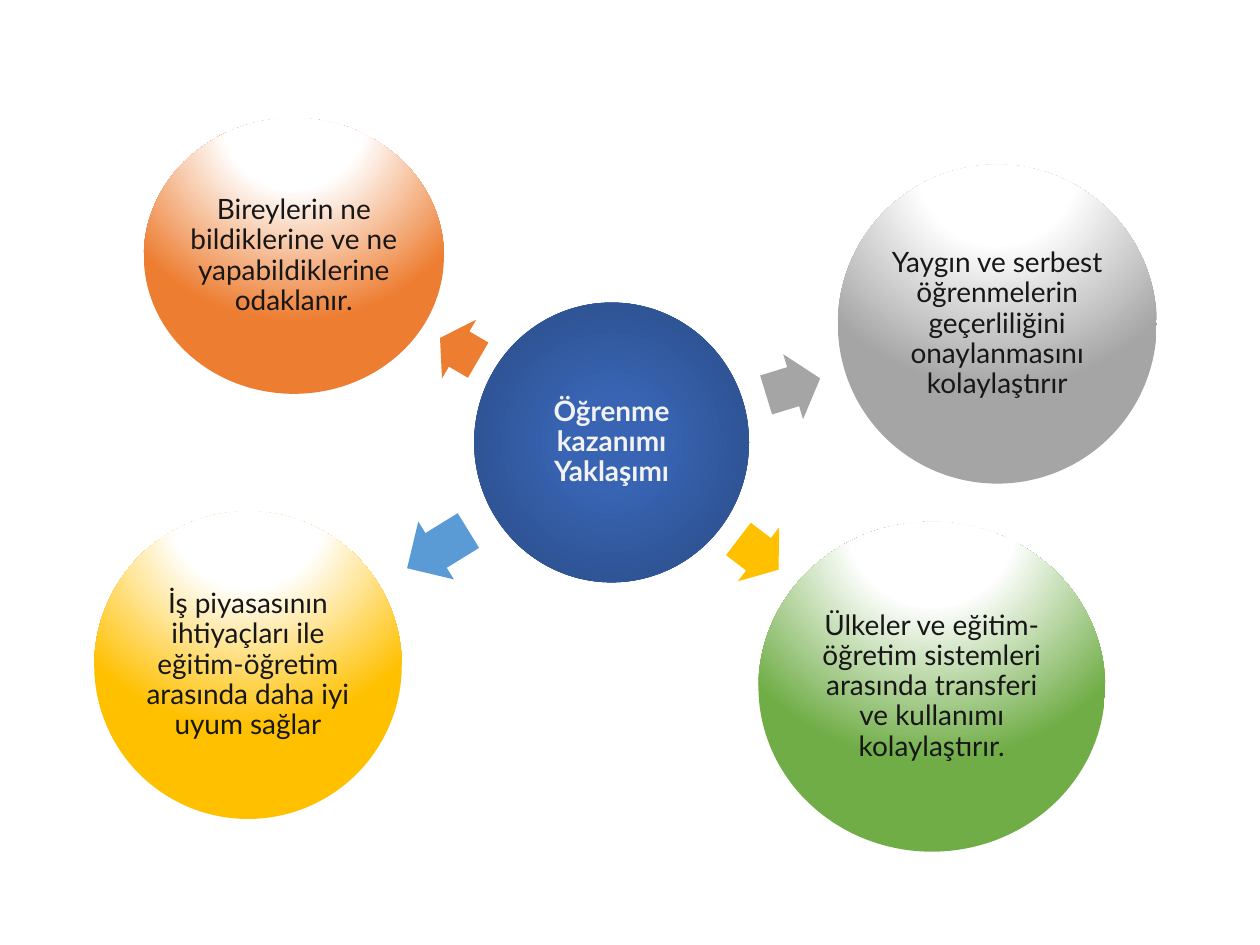
from dataclasses import dataclass

from pptx import Presentation
from pptx.dml.color import RGBColor
from pptx.enum.shapes import MSO_SHAPE
from pptx.enum.text import MSO_ANCHOR, PP_ALIGN
from pptx.oxml import parse_xml
from pptx.oxml.ns import nsdecls
from pptx.shapes.autoshape import Shape
from pptx.slide import Slide
from pptx.util import Cm, Pt

OVAL = MSO_SHAPE.OVAL
ARROW = MSO_SHAPE.RIGHT_ARROW
MIDDLE = MSO_ANCHOR.MIDDLE
CENTER = PP_ALIGN.CENTER

FONT = "Lato"
DARK = "181717"
LIGHT = "F2F2F2"
ARROW_BREADTH = 1.37

Stops = list[tuple[int, str]]
HUB_STOPS: Stops = [(0, "3864B3"), (23, "3864B3"), (69, "2F5597"), (97, "2C4F8C")]


@dataclass(frozen=True)
class Circle:
    """Position and size in centimetres."""
    left: float
    top: float
    width: float
    height: float
    text: str


@dataclass(frozen=True)
class Arrow:
    """Position and length in centimetres, rotation in degrees."""
    left: float
    top: float
    length: float
    rotation: float
    color: str


@dataclass(frozen=True)
class Benefit:
    arrow: Arrow
    circle: Circle
    color: str


HUB = Circle(9.56, 6.1, 5.54, 5.64, "Öğrenme kazanımı Yaklaşımı")
BENEFITS = [
    Benefit(
        Arrow(8.81, 6.35, 0.89, 210.2, "ED7D31"),
        Circle(2.9, 2.38, 6.05, 5.56,
               "Bireylerin ne bildiklerine ve ne yapabildiklerine odaklanır."),
        "ED7D31"),
    Benefit(
        Arrow(15.42, 7.11, 1.14, 343, "A5A5A5"),
        Circle(16.89, 3.32, 6.43, 6.43,
               "Yaygın ve serbest öğrenmelerin geçerliliğini onaylanmasını kolaylaştırır"),
        "A5A5A5"),
    Benefit(
        Arrow(14.78, 10.49, 1.02, 37.4, "FFC000"),
        Circle(15.29, 10.52, 6.99, 6.65,
               "Ülkeler ve eğitim-öğretim sistemleri arasında transferi ve kullanımı "
               "kolaylaştırır."),
        "70AD47"),
    Benefit(
        Arrow(8.1, 10.39, 1.45, 148.4, "5B9BD5"),
        Circle(1.9, 10.31, 6.2, 6.2,
               "İş piyasasının ihtiyaçları ile eğitim-öğretim arasında daha iyi uyum sağlar"),
        "FFC000"),
]


def rgb(color: str) -> RGBColor:
    return RGBColor.from_string(color)


def fill_radial(shape: Shape, stops: Stops, focus: int) -> None:
    """Fill with a circular gradient whose focus is a percentage of the height."""
    shape.fill.background()
    stop_xml = "".join(
        f'<a:gs pos="{position * 1000}"><a:srgbClr val="{color}"/></a:gs>'
        for position, color in stops)
    gradient = parse_xml(
        f'<a:gradFill {nsdecls("a")} rotWithShape="1"><a:gsLst>{stop_xml}</a:gsLst>'
        f'<a:path path="circle"><a:fillToRect l="50000" t="{focus * 1000}" '
        f'r="50000" b="{(100 - focus) * 1000}"/></a:path></a:gradFill>')
    properties = shape.element.spPr
    properties.replace(properties.find("{*}noFill"), gradient)


def write_text(shape: Shape, text: str, *, color: str, bold: bool = False,
               inset: float = 0, size: float = 16) -> None:
    frame = shape.text_frame
    frame.word_wrap = True
    frame.vertical_anchor = MIDDLE
    frame.margin_left = frame.margin_right = Cm(inset)
    frame.margin_top = frame.margin_bottom = Cm(inset)
    paragraph = frame.paragraphs[0]
    paragraph.alignment = CENTER
    paragraph.line_spacing = 0.9
    paragraph.space_after = Pt(0.35 * size)
    run = paragraph.add_run()
    run.text = text
    run.font.name = FONT
    run.font.size = Pt(size)
    run.font.bold = bold
    run.font.color.rgb = rgb(color)


def draw_circle(slide: Slide, circle: Circle, stops: Stops, focus: int) -> Shape:
    shape = slide.shapes.add_shape(OVAL, Cm(circle.left), Cm(circle.top),
                                   Cm(circle.width), Cm(circle.height))
    shape.shadow.inherit = False
    shape.line.fill.background()
    fill_radial(shape, stops, focus)
    return shape


def draw_arrow(slide: Slide, arrow: Arrow) -> None:
    shape = slide.shapes.add_shape(ARROW, Cm(arrow.left), Cm(arrow.top),
                                   Cm(arrow.length), Cm(ARROW_BREADTH))
    shape.adjustments[0] = 0.6
    shape.adjustments[1] = 0.5
    shape.rotation = arrow.rotation
    shape.shadow.inherit = False
    shape.line.fill.background()
    shape.fill.solid()
    shape.fill.fore_color.rgb = rgb(arrow.color)


def draw_benefit(slide: Slide, benefit: Benefit) -> None:
    draw_arrow(slide, benefit.arrow)
    stops = [(0, "FFFFFF"), (35, "FFFFFF"), (100, benefit.color)]
    circle = draw_circle(slide, benefit.circle, stops, focus=-80)
    write_text(circle, benefit.circle.text, color=DARK, inset=0.05)


def main() -> None:
    presentation = Presentation()
    presentation.slide_width = Cm(25.4)
    presentation.slide_height = Cm(19.05)
    slide = presentation.slides.add_slide(presentation.slide_layouts[6])
    hub = draw_circle(slide, HUB, HUB_STOPS, focus=50)
    write_text(hub, HUB.text, color=LIGHT, bold=True)
    for benefit in BENEFITS:
        draw_benefit(slide, benefit)
    presentation.save("out.pptx")


if __name__ == "__main__":
    main()
